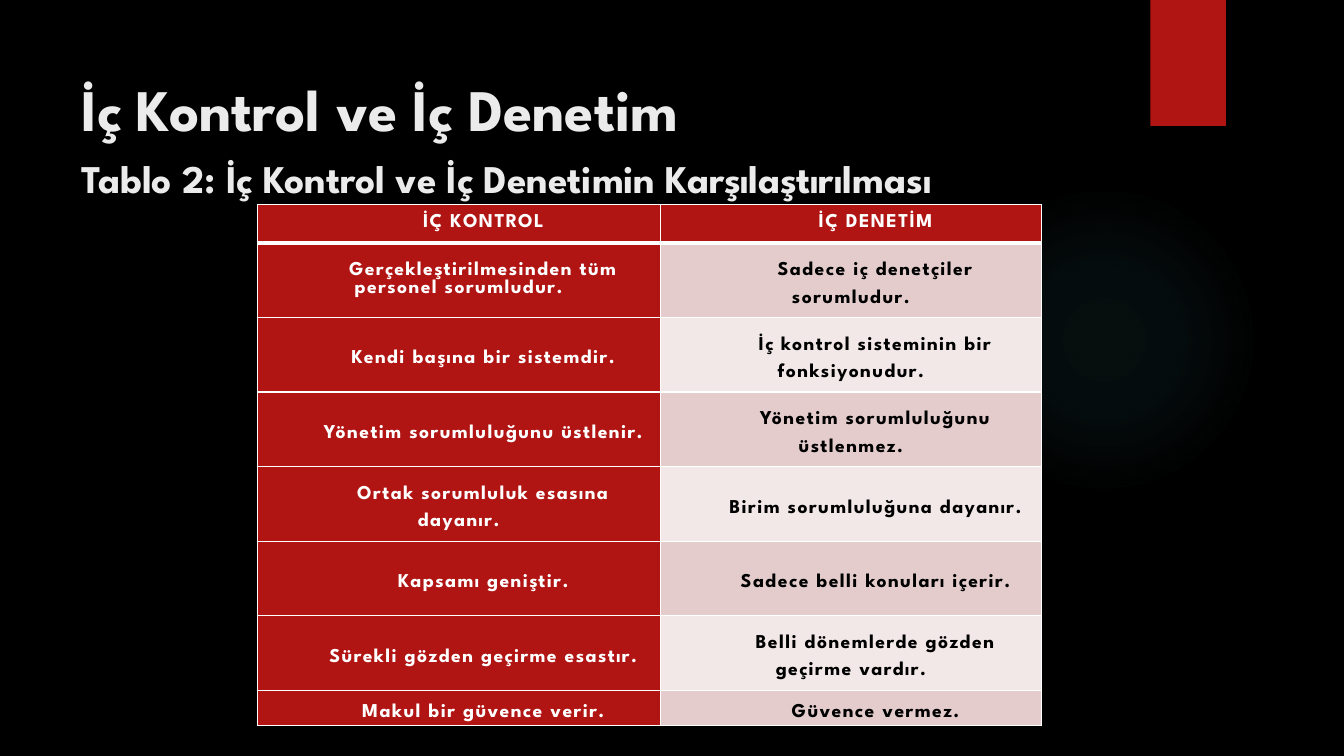
from dataclasses import dataclass

from lxml import etree
from pptx import Presentation
from pptx.dml.color import RGBColor
from pptx.enum import shapes, text
from pptx.oxml import ns
from pptx.util import Inches, Pt


@dataclass(frozen=True)
class Theme:
    font: str = "League Spartan"
    background: str = "000000"
    red: str = "B01513"
    glow: str = "50B9C1"
    title: str = "EBEBEB"
    light_text: str = "FFFFFF"
    dark_text: str = "000000"
    border: str = "FFFFFF"
    bands: tuple = ("E4CCCC", "F2E8E7")
    title_size: int = 42
    subtitle_size: int = 28
    table_size: int = 14


THEME = Theme()
HEADINGS = ("İÇ KONTROL", "İÇ DENETİM")
COMPARISON = (
    ("Gerçekleştirilmesinden tüm personel sorumludur.", "Sadece iç denetçiler sorumludur."),
    ("Kendi başına bir sistemdir.", "İç kontrol sisteminin bir fonksiyonudur."),
    ("Yönetim sorumluluğunu üstlenir.", "Yönetim sorumluluğunu üstlenmez."),
    ("Ortak sorumluluk esasına dayanır.", "Birim sorumluluğuna dayanır."),
    ("Kapsamı geniştir.", "Sadece belli konuları içerir."),
    ("Sürekli gözden geçirme esastır.", "Belli dönemlerde gözden geçirme vardır."),
    ("Makul bir güvence verir.", "Güvence vermez."),
)
COLUMN_WIDTHS = (4, 3.78)
ROW_HEIGHTS = (0.38, *[0.74] * 6, 0.35)


def set_font(paragraph, size, color):
    font = paragraph.font
    font.name, font.size, font.bold = THEME.font, Pt(size), True
    font.color.rgb = RGBColor.from_string(color)


def add_plain_shape(slide, kind, box):
    shape = slide.shapes.add_shape(kind, *map(Inches, box))
    shape.shadow.inherit = False
    shape.line.fill.background()
    return shape


def add_glow(slide, box):
    """Place a circle that fades out from its centre."""
    glow = add_plain_shape(slide, shapes.MSO_SHAPE.OVAL, box)
    stops = "".join(
        f'<a:gs pos="{position * 1000}"><a:srgbClr val="{THEME.glow}">'
        f'<a:alpha val="{opacity * 1000}"/></a:srgbClr></a:gs>'
        for position, opacity in ((0, 7), (36, 6), (69, 0))
    )
    gradient = etree.fromstring(
        f'<a:gradFill {ns.nsdecls("a")}><a:gsLst>{stops}</a:gsLst><a:path path="circle">'
        '<a:fillToRect l="50000" t="50000" r="50000" b="50000"/></a:path></a:gradFill>'
    )
    outline = glow.element.spPr.find(ns.qn("a:ln"))
    outline.addprevious(gradient)


def add_ribbon(slide, box):
    ribbon = add_plain_shape(slide, shapes.MSO_SHAPE.RECTANGLE, box)
    ribbon.fill.solid()
    ribbon.fill.fore_color.rgb = RGBColor.from_string(THEME.red)


def add_heading(slide, box):
    frame = slide.shapes.add_textbox(*map(Inches, box)).text_frame
    frame.word_wrap = True
    frame.margin_top = Inches(0.22)
    title = frame.paragraphs[0]
    title.text = "İç Kontrol ve İç Denetim"
    set_font(title, THEME.title_size, THEME.title)
    subtitle = frame.add_paragraph()
    subtitle.text = "Tablo 2: İç Kontrol ve İç Denetimin Karşılaştırılması"
    subtitle.space_before = Pt(8)
    set_font(subtitle, THEME.subtitle_size, THEME.title)


def set_borders(cell, top, bottom):
    properties = cell._tc.get_or_add_tcPr()
    for side, width in (("L", 1), ("R", 1), ("T", top), ("B", bottom)):
        line = etree.SubElement(properties, ns.qn(f"a:ln{side}"), w=str(Pt(width)))
        fill = etree.SubElement(line, ns.qn("a:solidFill"))
        etree.SubElement(fill, ns.qn("a:srgbClr"), val=THEME.border)


def fill_cell(cell, wording, fill, color, line_spacing):
    cell.margin_left = cell.margin_right = Inches(0.07)
    cell.margin_top = cell.margin_bottom = 0
    cell.fill.solid()
    cell.fill.fore_color.rgb = RGBColor.from_string(fill)
    paragraph = cell.text_frame.paragraphs[0]
    paragraph.alignment = text.PP_ALIGN.CENTER
    paragraph.line_spacing = line_spacing
    properties = paragraph._p.get_or_add_pPr()
    properties.set("marL", "0")
    properties.set("indent", str(Inches(0.49)))
    run = paragraph.add_run()
    run.text = wording
    run._r.get_or_add_rPr().set("spc", "100")
    set_font(paragraph, THEME.table_size, color)


def add_comparison(slide, left, top):
    rows = (HEADINGS, *COMPARISON)
    table = slide.shapes.add_table(
        len(rows), len(HEADINGS), Inches(left), Inches(top),
        Inches(sum(COLUMN_WIDTHS)), Inches(sum(ROW_HEIGHTS)),
    ).table
    for column, width in zip(table.columns, COLUMN_WIDTHS):
        column.width = Inches(width)
    for r, (height, wordings) in enumerate(zip(ROW_HEIGHTS, rows)):
        table.rows[r].height = Inches(height)
        for c, wording in enumerate(wordings):
            cell = table.cell(r, c)
            set_borders(cell, top=3 if r == 1 else 1, bottom=3 if r == 0 else 1)
            on_red = r == 0 or c == 0
            fill = THEME.red if on_red else THEME.bands[(r - 1) % 2]
            color = THEME.light_text if on_red else THEME.dark_text
            fill_cell(cell, wording, fill, color, 1.0 if (r, c) == (1, 0) else 1.5)
            if r > 0:
                cell.vertical_anchor = text.MSO_ANCHOR.MIDDLE


def main():
    deck = Presentation()
    deck.slide_width, deck.slide_height = Inches(13.33), Inches(7.5)
    slide = deck.slides.add_slide(deck.slide_layouts[6])
    slide.background.fill.solid()
    slide.background.fill.fore_color.rgb = RGBColor.from_string(THEME.background)
    add_glow(slide, (9.41, 1.83, 3.08, 3.08))
    add_ribbon(slide, (11.41, 0, 0.75, 1.25))
    add_heading(slide, (0.71, 0.5, 10.29, 1.53))
    add_comparison(slide, 2.55, 2.03)
    deck.save("out.pptx")


if __name__ == "__main__":
    main()
